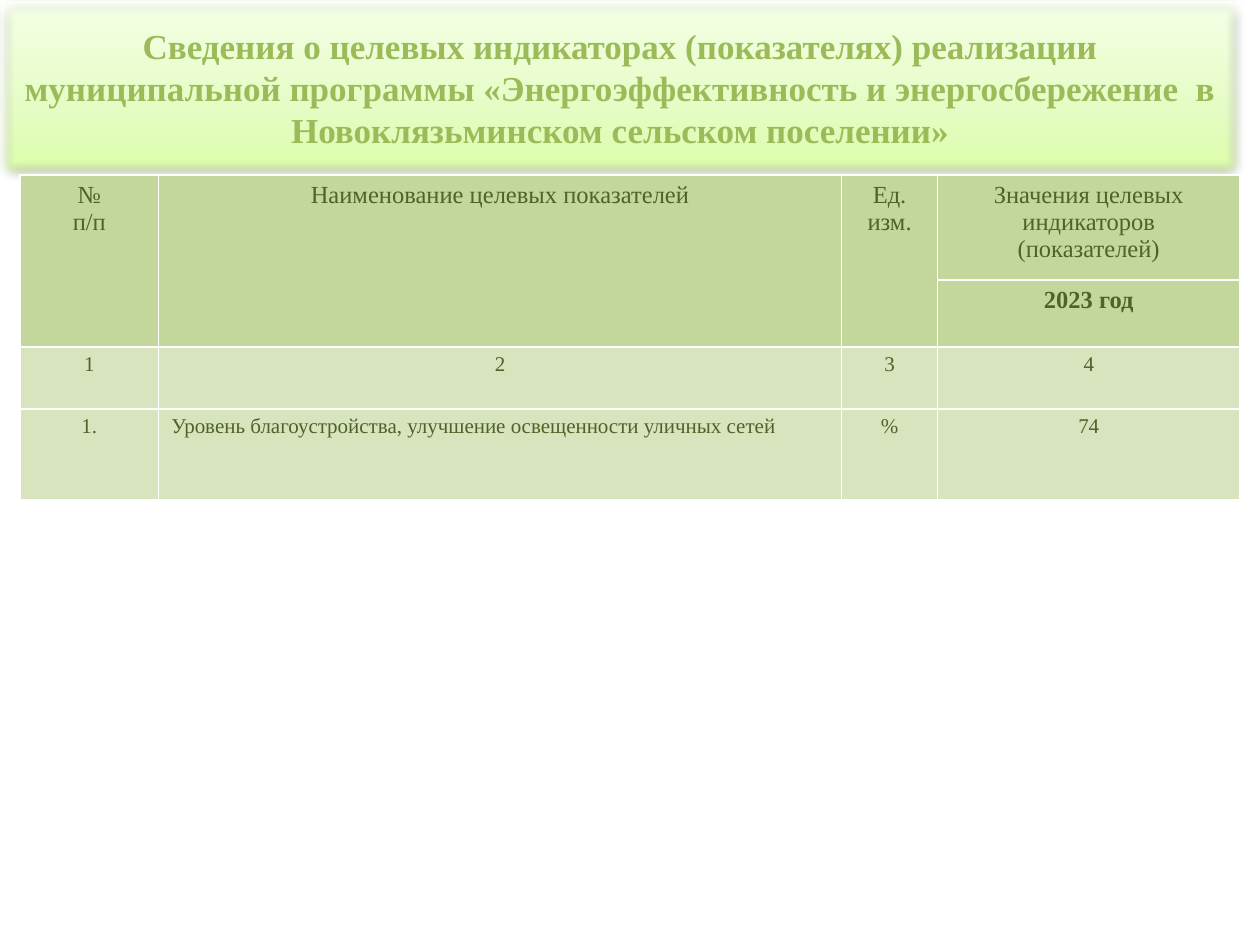
from pptx import Presentation
from pptx.dml.color import RGBColor
from pptx.enum.text import MSO_ANCHOR, MSO_AUTO_SIZE, PP_ALIGN
from pptx.oxml import parse_xml
from pptx.oxml.ns import nsdecls
from pptx.util import Pt

CENTER, LEFT = PP_ALIGN.CENTER, PP_ALIGN.LEFT
MIDDLE = MSO_ANCHOR.MIDDLE
NO_AUTOFIT = MSO_AUTO_SIZE.NONE

FONT = "Times New Roman"
TITLE_GREEN, TEXT_GREEN, LINE_GREEN = "9BBB59", "4F6228", "98B955"
HEADER_FILL, BODY_FILL, BORDER = "C3D69B", "D7E4BD", "FFFFFF"
TITLE_STOPS = [(0, "DAFDA7"), (35, "E4FCC2"), (100, "F5FFE7")]

TITLE = ("Сведения о целевых индикаторах (показателях) реализации "
         "муниципальной программы «Энергоэффективность и энергосбережение  в "
         "Новоклязьминском сельском поселении»")
COLUMN_WIDTHS = [79.3, 390.3, 54.8, 172.8]
ROW_HEIGHTS = [60, 38, 35.5, 52]
HEADER_ROWS = 2
ROWS = [
    ["№\nп/п", "Наименование целевых показателей", "Ед. изм.",
     "Значения целевых индикаторов (показателей)"],
    ["", "", "", "2023 год"],
    ["1", "2", "3", "4"],
    ["1.", "Уровень благоустройства, улучшение освещенности уличных сетей",
     "%", "74"],
]


def rgb(color):
    return RGBColor.from_string(color)


def format_text(text_frame, size, color, bold=False, alignment=CENTER):
    for paragraph in text_frame.paragraphs:
        paragraph.alignment = alignment
        for run in paragraph.runs:
            run.font.name = FONT
            run.font.size = Pt(size)
            run.font.bold = bold
            run.font.color.rgb = rgb(color)


def add_title(slide):
    shape = slide.shapes.title
    shape.left, shape.top = Pt(0), Pt(0)
    shape.width, shape.height = Pt(708.7), Pt(100)

    # Vertical gradient, outline, shadow and soft edge
    stops = "".join(
        f'<a:gs pos="{position * 1000}"><a:srgbClr val="{color}"/></a:gs>'
        for position, color in TITLE_STOPS)
    properties = shape.element.spPr
    properties.append(parse_xml(
        f'<a:gradFill {nsdecls("a")} rotWithShape="1"><a:gsLst>{stops}</a:gsLst>'
        '<a:lin ang="16200000" scaled="1"/></a:gradFill>'))
    shape.line.color.rgb = rgb(LINE_GREEN)
    shape.line.width = Pt(0.75)
    properties.append(parse_xml(
        f'<a:effectLst {nsdecls("a")}>'
        f'<a:outerShdw blurRad="{Pt(3.1)}" dist="{Pt(1.6)}" dir="5400000" '
        'rotWithShape="0"><a:srgbClr val="000000"><a:alpha val="38000"/>'
        f'</a:srgbClr></a:outerShdw><a:softEdge rad="{Pt(5)}"/></a:effectLst>'))

    text_frame = shape.text_frame
    text_frame.text = TITLE
    text_frame.word_wrap = True
    text_frame.auto_size = NO_AUTOFIT
    text_frame.vertical_anchor = MIDDLE
    format_text(text_frame, 20, TITLE_GREEN, bold=True)


def set_borders(cell):
    properties = cell._tc.get_or_add_tcPr()
    for index, side in enumerate(("lnL", "lnR", "lnT", "lnB")):
        properties.insert(index, parse_xml(
            f'<a:{side} {nsdecls("a")} w="{Pt(1)}"><a:solidFill>'
            f'<a:srgbClr val="{BORDER}"/></a:solidFill></a:{side}>'))


def add_indicator_table(slide):
    table = slide.shapes.add_table(
        len(ROWS), len(COLUMN_WIDTHS), Pt(11.4), Pt(100),
        Pt(sum(COLUMN_WIDTHS)), Pt(sum(ROW_HEIGHTS))).table
    for column, width in zip(table.columns, COLUMN_WIDTHS):
        column.width = Pt(width)
    for row, height in zip(table.rows, ROW_HEIGHTS):
        row.height = Pt(height)

    for row_index, texts in enumerate(ROWS):
        is_header = row_index < HEADER_ROWS
        for column_index, text in enumerate(texts):
            cell = table.cell(row_index, column_index)
            cell.text_frame.text = text
            cell.fill.solid()
            cell.fill.fore_color.rgb = rgb(HEADER_FILL if is_header else BODY_FILL)
            set_borders(cell)
            is_name = row_index == 3 and column_index == 1
            format_text(cell.text_frame, 14 if is_header else 12, TEXT_GREEN,
                        bold=row_index == 1,
                        alignment=LEFT if is_name else CENTER)

    # The first three headings span both header rows
    for column_index in range(3):
        table.cell(0, column_index).merge(table.cell(1, column_index))


def main():
    presentation = Presentation()
    presentation.slide_width, presentation.slide_height = Pt(720), Pt(540)
    slide = presentation.slides.add_slide(presentation.slide_layouts[5])
    add_title(slide)
    add_indicator_table(slide)
    presentation.save("out.pptx")


if __name__ == "__main__":
    main()
